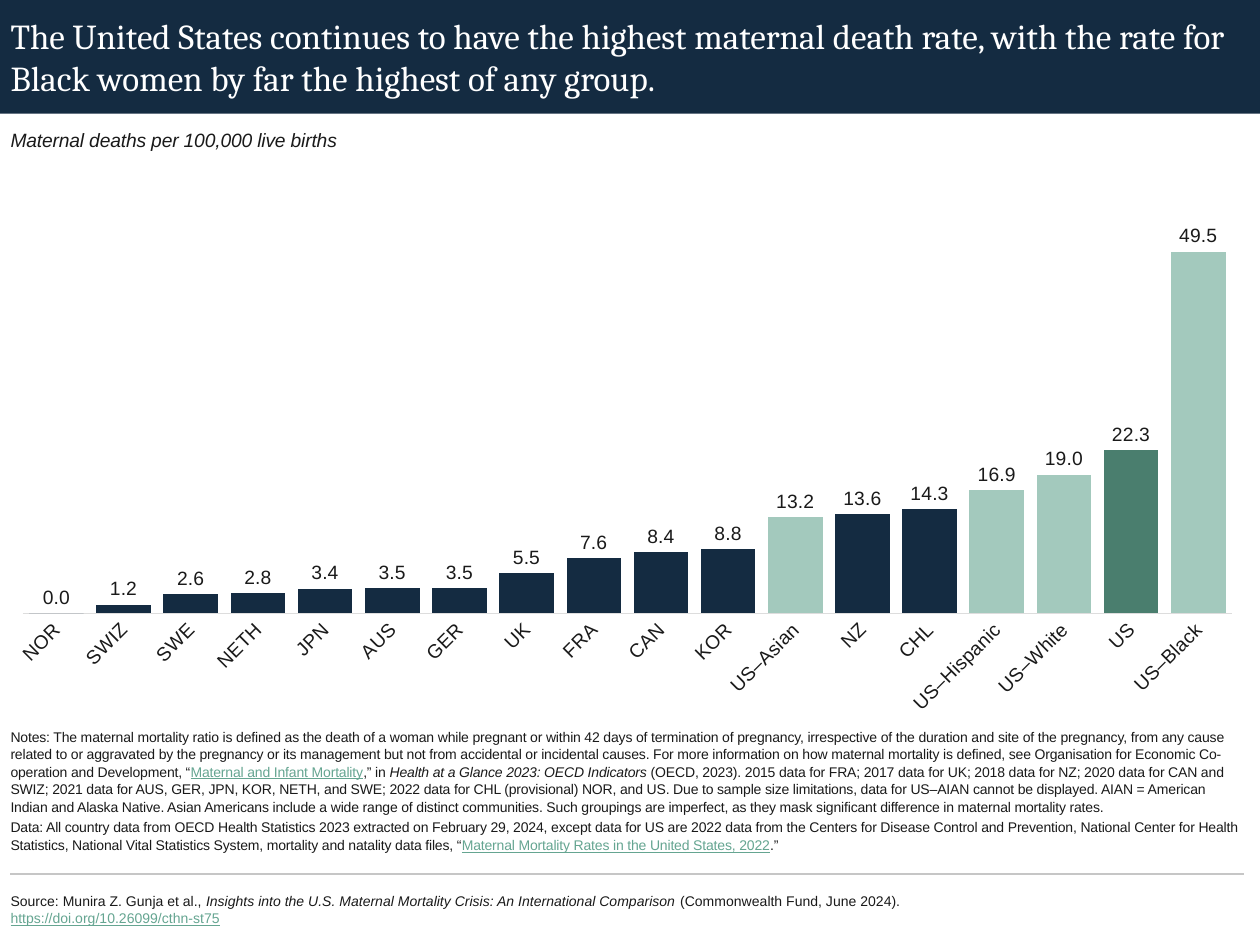
from lxml import etree
from pptx import Presentation
from pptx.chart.data import CategoryChartData
from pptx.dml.color import RGBColor
from pptx.enum import chart as ch, shapes, text
from pptx.oxml import parse_xml
from pptx.oxml.ns import nsdecls, qn
from pptx.util import Pt

NAVY = RGBColor(0x14, 0x2B, 0x41)
MINT = RGBColor(0xA3, 0xC9, 0xBD)
GREEN = RGBColor(0x4A, 0x7E, 0x6E)
LINK = RGBColor(0x65, 0xA5, 0x91)
INK = RGBColor(0x1A, 0x1A, 0x1A)
RULE = RGBColor(0xC6, 0xC6, 0xC6)
AXIS = RGBColor(0xDD, 0xDD, 0xDD)
WHITE = RGBColor(0xFF, 0xFF, 0xFF)

LEFT, WIDE = 6, 705
URL = {"color": LINK, "line": True}
SLANT = {"italic": True}

RATES = [
    ("NOR", 0), ("SWIZ", 1.2), ("SWE", 2.6), ("NETH", 2.8), ("JPN", 3.4),
    ("AUS", 3.5), ("GER", 3.5), ("UK", 5.5), ("FRA", 7.6), ("CAN", 8.4),
    ("KOR", 8.8), ("US–Asian", 13.2), ("NZ", 13.6), ("CHL", 14.3),
    ("US–Hispanic", 16.9), ("US–White", 19), ("US", 22.3), ("US–Black", 49.5),
]

NOTES = [
    [("Notes: The maternal mortality ratio is defined as the death of a woman while pregnant or within 42 days of "
      "termination of pregnancy, irrespective of the duration and site of the pregnancy, from any cause related to or "
      "aggravated by the pregnancy or its management but not from accidental or incidental causes. For more information "
      "on how maternal mortality is defined, see Organisation for Economic Co-operation and Development, “", {}),
     ("Maternal and Infant Mortality", URL),
     (",” in ", {}),
     ("Health at a Glance 2023: OECD Indicators", SLANT),
     (" (OECD, 2023). 2015 data for FRA; 2017 data for UK; 2018 data for NZ; 2020 data for CAN and SWIZ; 2021 data for "
      "AUS, GER, JPN, KOR, NETH, and SWE; 2022 data for CHL (provisional) NOR, and US. Due to sample size limitations, "
      "data for US–AIAN cannot be displayed. AIAN = American Indian and Alaska Native. Asian Americans include a wide "
      "range of distinct communities. Such groupings are imperfect, as they mask significant difference in maternal "
      "mortality rates.", {})],
    [("Data: All country data from OECD Health Statistics 2023 extracted on February 29, 2024, except data for US are "
      "2022 data from the Centers for Disease Control and Prevention, National Center for Health Statistics, National "
      "Vital Statistics System, mortality and natality data files, “", {}),
     ("Maternal Mortality Rates in the United States, 2022", URL),
     (".”", {})],
]

SOURCE = [[
    ("Source: Munira Z. Gunja et al., ", {}),
    ("Insights into the U.S. Maternal Mortality Crisis: An International Comparison", SLANT),
    (" (Commonwealth Fund, June 2024). ", {}),
    ("https://doi.org/10.26099/cthn-st75", URL),
]]


def style(font, size, color=INK, name="Arial", italic=False, line=False):
    font.size = Pt(size)
    font.name = name
    font.color.rgb = color
    font.italic = italic
    font.underline = line


def write(shape, paras, anchor=text.MSO_ANCHOR.MIDDLE, track=0, lead=1, after=0, **look):
    frame = shape.text_frame
    frame.word_wrap = True
    frame.auto_size = text.MSO_AUTO_SIZE.NONE
    frame.vertical_anchor = anchor
    frame.margin_left = frame.margin_right = frame.margin_top = frame.margin_bottom = 0
    for i, runs in enumerate(paras):
        para = frame.add_paragraph() if i else frame.paragraphs[0]
        para.alignment = text.PP_ALIGN.LEFT
        para.line_spacing = lead
        para.space_after = Pt(after)
        for words, extra in runs:
            run = para.add_run()
            run.text = words
            style(run.font, **{**look, **extra})
            if track:
                run.font._element.set("spc", str(track))


def add_text(slide, box, paras, **look):
    write(slide.shapes.add_textbox(*map(Pt, box)), paras, **look)


def add_head(slide, box):
    x, y, w, h = map(Pt, box)
    band = slide.shapes.add_shape(shapes.MSO_SHAPE.RECTANGLE, x, y, w, h)
    band.shadow.inherit = False
    band.fill.solid()
    band.fill.fore_color.rgb = NAVY
    band.line.fill.background()
    title = slide.shapes.title
    title.element.addprevious(band.element)
    title.left, title.top, title.width, title.height = x + Pt(LEFT), y, Pt(WIDE), h
    words = ("The United States continues to have the highest maternal death rate, "
             "with the rate for Black women by far the highest of any group.")
    write(title, [[(words, {})]], size=20, color=WHITE, name="Cambria")


def tint(name):
    return GREEN if name == "US" else MINT if name.startswith("US–") else NAVY


def add_bars(slide, box):
    data = CategoryChartData(number_format="0.0")
    data.categories = [name for name, rate in RATES]
    data.add_series("Series 1", [rate for name, rate in RATES])
    kind = ch.XL_CHART_TYPE.COLUMN_CLUSTERED
    chart = slide.shapes.add_chart(kind, *map(Pt, box), data).chart
    chart.has_legend = chart.has_title = False
    style(chart.font, 10)

    value = chart.value_axis
    value.minimum_scale, value.maximum_scale = 0, 60
    value.has_major_gridlines = value.visible = False

    cat = chart.category_axis
    cat.major_tick_mark = ch.XL_TICK_MARK.NONE
    cat.format.line.color.rgb = AXIS
    cat.format.line.width = Pt(0.75)
    style(cat.tick_labels.font, 11)
    turn = cat._element.find(qn("c:txPr")).find(qn("a:bodyPr"))
    turn.set("rot", "-2700000")
    turn.set("vert", "horz")

    plot = chart.plots[0]
    plot.gap_width = 23
    plot.vary_by_categories = False
    bars = plot.series[0]
    bars.format.fill.solid()
    bars.format.fill.fore_color.rgb = NAVY
    for i, (name, rate) in enumerate(RATES):
        if tint(name) != NAVY:
            fill = bars.points[i].format.fill
            fill.solid()
            fill.fore_color.rgb = tint(name)

    tags = bars.data_labels
    tags.show_value = True
    tags.position = ch.XL_LABEL_POSITION.OUTSIDE_END
    tags.number_format = "#,##0.0"
    tags.number_format_is_linked = False
    style(tags.font, 11)

    area = chart._chartSpace.chart.plotArea
    for old in area.findall(qn("c:layout")):
        area.remove(old)
    spots = {"x": 0.01, "y": 0.02, "w": 0.98, "h": 0.77}
    modes = "".join(f'<c:{k}Mode val="edge"/>' for k in "xy")
    sizes = "".join(f'<c:{k} val="{v}"/>' for k, v in spots.items())
    area.insert(0, parse_xml(
        f'<c:layout {nsdecls("c")}><c:manualLayout><c:layoutTarget val="inner"/>'
        f'{modes}{sizes}</c:manualLayout></c:layout>'))


def add_foot(slide, box):
    x, y, w, h = box
    rule = slide.shapes.add_connector(
        shapes.MSO_CONNECTOR.STRAIGHT, Pt(x), Pt(y), Pt(x + w), Pt(y))
    rule.line.color.rgb = RULE
    rule.line.width = Pt(0.75)
    etree.SubElement(rule.element.spPr, qn("a:effectLst"))
    add_text(slide, (x, y + 3.5, 522, h - 3.5), SOURCE, size=8)


def main():
    deck = Presentation()
    deck.slide_width, deck.slide_height = Pt(720), Pt(540)
    slide = deck.slides.add_slide(deck.slide_layouts[5])
    add_head(slide, (0, 0, 720, 65))
    add_text(slide, (LEFT, 70, WIDE, 20), [[("Maternal deaths per 100,000 live births", SLANT)]],
             size=11, track=-10)
    add_bars(slide, (LEFT, 93.5, WIDE, 325.5))
    add_text(slide, (LEFT, 408, WIDE, 79.5), NOTES, anchor=text.MSO_ANCHOR.BOTTOM,
             size=8, track=-10, lead=1.04, after=2)
    add_foot(slide, (LEFT, 499.5, WIDE, 37))
    deck.save("out.pptx")


if __name__ == "__main__":
    main()
